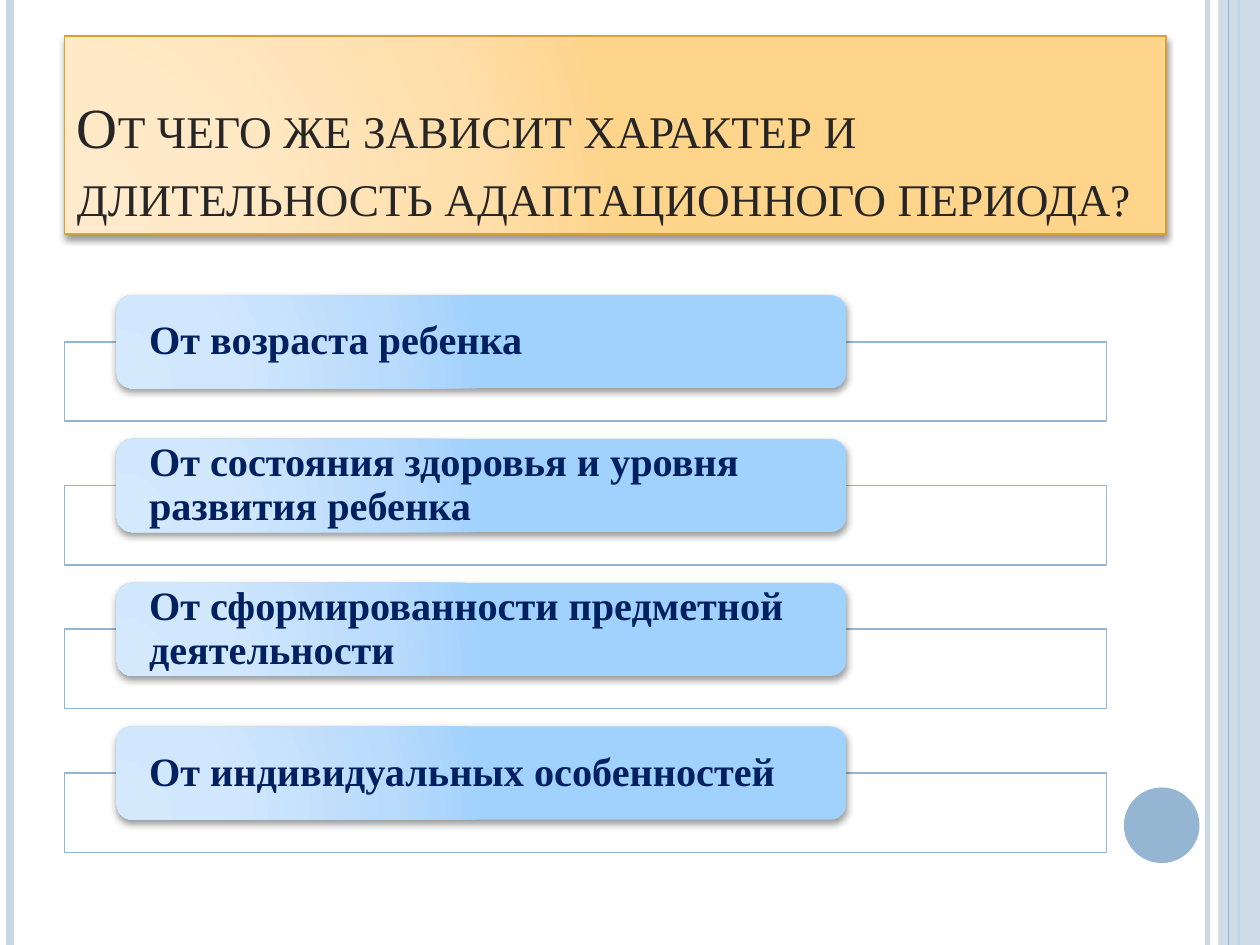
from collections import namedtuple
from dataclasses import dataclass

from pptx import Presentation
from pptx import util as u
from pptx.dml.color import RGBColor
from pptx.enum import shapes, text
from pptx.oxml import parse_xml
from pptx.oxml.ns import nsdecls, qn

COLUMNS, ROWS = 100, 75
CELL = u.Inches(0.1)
Box = namedtuple("Box", "left top width height")


@dataclass(frozen=True)
class Theme:
    """Colours, font and type sizes of the slide."""
    font: str = "Times New Roman"
    title_size: float = 32.4
    factor_size: float = 23
    title_ink: str = "262626"
    factor_ink: str = "002060"
    accent: str = "94B6D2"
    pale: str = "C8D7E5"
    paper: str = "FFFFFF"
    gold_line: str = "D4A334"
    gold: tuple = ("FFEACB", "FFE9C6", "FFDEA9", "FFD48B")
    blue: tuple = ("D5E9FD", "D1E7FD", "B9DBFC", "A1D1FD")


THEME = Theme()
FACTORS = (
    "От возраста ребенка",
    "От состояния здоровья и уровня развития ребенка",
    "От сформированности предметной деятельности",
    "От индивидуальных особенностей",
)


def cells(count):
    """Convert grid cells to a slide length."""
    return int(count * CELL)


def set_alpha(fill, colour, percent):
    """Fill with a solid colour of the given opacity."""
    fill.solid()
    fill.fore_color.rgb = RGBColor.from_string(colour)
    if percent < 100:
        solid = fill._xPr.find(qn("a:solidFill"))
        solid[0].append(parse_xml(f'<a:alpha {nsdecls("a")} val="{percent * 1000}"/>'))


def add_panel(slide, kind, box, colour=None, opacity=100, line=None):
    """Add a flat preset shape on the grid."""
    panel = slide.shapes.add_shape(kind, *map(cells, box))
    panel.shadow.inherit = False
    if colour:
        set_alpha(panel.fill, colour, opacity)
    if line:
        panel.line.color.rgb = RGBColor.from_string(line)
        panel.line.width = u.Pt(1)
    else:
        panel.line.fill.background()
    return panel


def add_glow(panel, colours):
    """Give a panel a radial gradient and a soft shadow below."""
    stops = "".join(
        f'<a:gs pos="{place * 1000}"><a:srgbClr val="{colour}"/></a:gs>'
        for place, colour in zip((0, 30, 75, 100), colours))
    gradient = parse_xml(
        f'<a:gradFill {nsdecls("a")} rotWithShape="1"><a:gsLst>{stops}</a:gsLst>'
        '<a:path path="circle"><a:fillToRect l="5000" t="100000" r="120000" b="10000"/>'
        '</a:path></a:gradFill>')
    panel.fill.background()
    properties = panel._element.spPr
    properties.replace(properties.find(qn("a:noFill")), gradient)
    properties.find(qn("a:effectLst")).append(parse_xml(
        f'<a:outerShdw {nsdecls("a")} blurRad="{u.Pt(4)}" dist="{u.Pt(2)}" dir="5400000" '
        'rotWithShape="0"><a:srgbClr val="000000"><a:alpha val="40000"/></a:srgbClr>'
        '</a:outerShdw>'))


def write(holder, words, size, ink, anchor):
    """Write one left-aligned run and return its paragraph and run."""
    frame = holder.text_frame
    frame.word_wrap = True
    frame.vertical_anchor = anchor
    paragraph = frame.paragraphs[0]
    paragraph.alignment = text.PP_ALIGN.LEFT
    run = paragraph.add_run()
    run.text = words
    run.font.name = THEME.font
    run.font.size = u.Pt(size)
    run.font.color.rgb = RGBColor.from_string(ink)
    return paragraph, run


def add_stripe(slide, box, column, colour, width, opacity=100):
    """Draw a vertical stripe over the height of the box."""
    x = cells(box.left + column)
    stripe = slide.shapes.add_connector(
        shapes.MSO_CONNECTOR.STRAIGHT, x, cells(box.top), x, cells(box.top + box.height))
    set_alpha(stripe.line.fill, colour, opacity)
    stripe.line.width = u.Pt(width)
    stripe._element.spPr.append(parse_xml(f'<a:effectLst {nsdecls("a")}/>'))


def add_frame(slide, box):
    """Draw the side stripes, the right band and the disc."""
    add_stripe(slide, box, 95.83, THEME.pale, 3, 93)
    add_stripe(slide, box, 0.83, THEME.pale, 4.5)
    add_stripe(slide, box, 98.33, THEME.accent, 1.5)
    band = Box(box.left + 96.7, box.top, box.width - 96.7, box.height)
    add_panel(slide, shapes.MSO_SHAPE.RECTANGLE, band, THEME.pale, 87)
    add_stripe(slide, box, 97.5, THEME.accent, 0.75)
    disc = Box(box.left + 89.2, box.top + 62.5, 6, 6)
    add_panel(slide, shapes.MSO_SHAPE.OVAL, disc, THEME.accent)


def add_title(slide, box, words):
    """Draw the golden title panel with small capitals."""
    title = add_panel(slide, shapes.MSO_SHAPE.RECTANGLE, box, line=THEME.gold_line)
    add_glow(title, THEME.gold)
    _, run = write(title, words, THEME.title_size, THEME.title_ink, text.MSO_ANCHOR.BOTTOM)
    run.font._element.set("cap", "small")


def add_factor(slide, box, words):
    """Draw one factor: an outlined tray, a label over its top edge and its wording."""
    tray = Box(box.left, box.top + 3.7, box.width, box.height - 3.7)
    add_panel(slide, shapes.MSO_SHAPE.RECTANGLE, tray, THEME.paper, 90, THEME.accent)
    label = Box(box.left + box.width * 0.05, box.top, box.width * 0.7, 7.4)
    add_glow(add_panel(slide, shapes.MSO_SHAPE.ROUNDED_RECTANGLE, label), THEME.blue)
    inset = 0.36
    factor = slide.shapes.add_textbox(
        *map(cells, (label.left + inset, label.top + inset,
                     label.width - 2 * inset, label.height - 2 * inset)))
    paragraph, run = write(factor, words, THEME.factor_size, THEME.factor_ink,
                           text.MSO_ANCHOR.MIDDLE)
    paragraph.line_spacing = 0.9
    run.font.bold = True
    frame = factor.text_frame
    frame.margin_left = frame.margin_right = cells(2.2)
    frame.margin_top = frame.margin_bottom = 0


def add_factors(slide, box, factors):
    """Stack the factors at an equal pitch inside the box."""
    height = 10
    pitch = (box.height - height) / (len(factors) - 1)
    for index, words in enumerate(factors):
        add_factor(slide, Box(box.left, box.top + index * pitch, box.width, height), words)


def main():
    """Build and save the slide."""
    deck = Presentation()
    deck.slide_width, deck.slide_height = cells(COLUMNS), cells(ROWS)
    slide = deck.slides.add_slide(deck.slide_layouts[6])
    add_frame(slide, Box(0, 0, COLUMNS, ROWS))
    add_title(slide, Box(5.13, 2.88, 87.4, 15.7),
              "От чего же зависит характер и длительность адаптационного периода?")
    add_factors(slide, Box(5.13, 23.43, 82.7, 44.23), FACTORS)
    deck.save("out.pptx")


if __name__ == "__main__":
    main()
